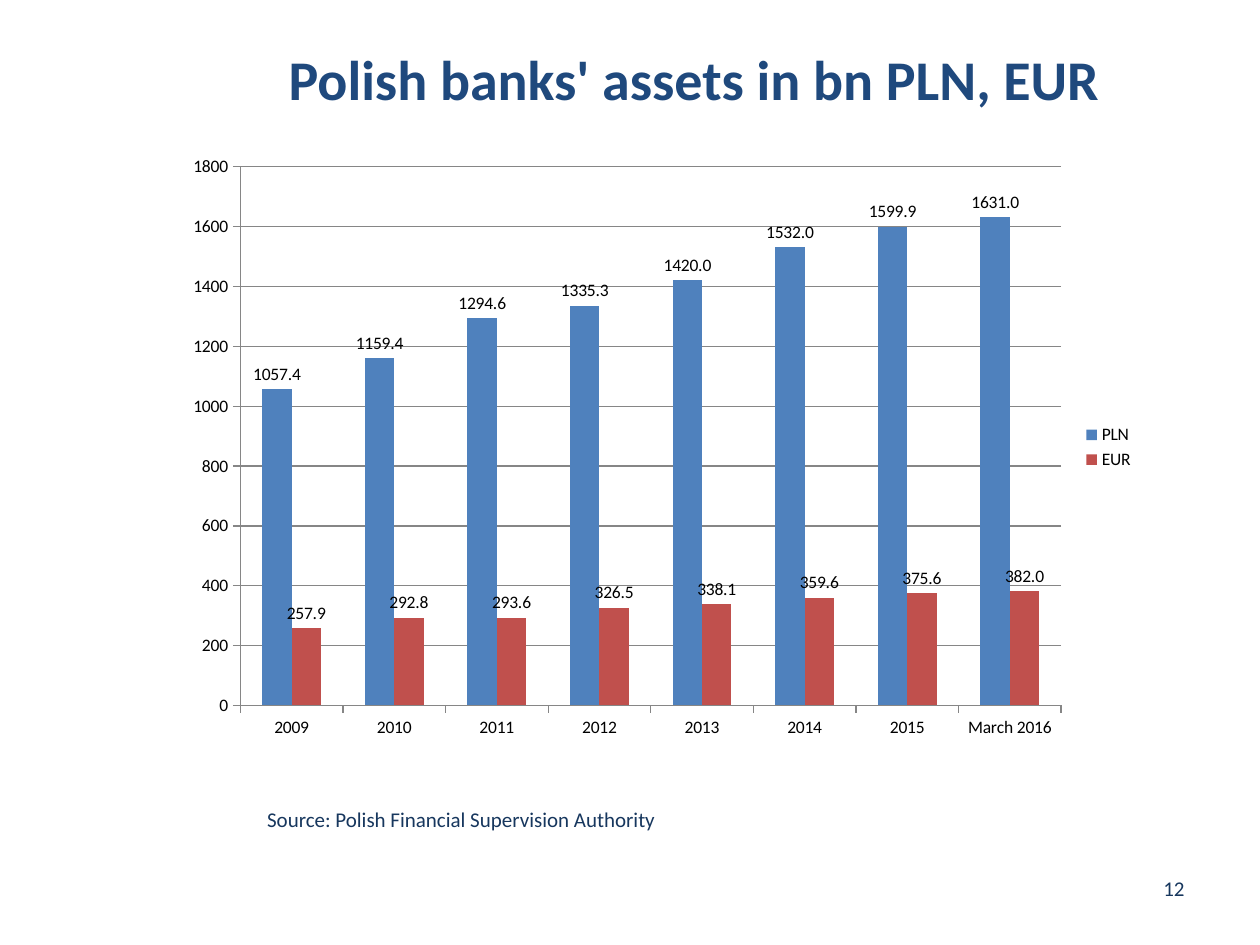
"""Build a slide charting Polish banks' assets in PLN and EUR."""
from pptx import Presentation
from pptx.chart.data import CategoryChartData
from pptx.dml.color import RGBColor
from pptx.enum.chart import XL_CHART_TYPE, XL_LABEL_POSITION, XL_LEGEND_POSITION, XL_TICK_MARK
from pptx.enum.text import MSO_ANCHOR, PP_ALIGN
from pptx.util import Inches, Pt

TITLE_BLUE = RGBColor(0x1F, 0x49, 0x7D)
TEXT_BLUE = RGBColor(0x17, 0x37, 0x5E)
BLACK = RGBColor(0x00, 0x00, 0x00)
GREY = RGBColor(0x86, 0x86, 0x86)
PLN_BLUE = RGBColor(0x4F, 0x81, 0xBD)
EUR_RED = RGBColor(0xC0, 0x50, 0x4D)
FONT = "Calibri"

YEARS = ["2009", "2010", "2011", "2012", "2013", "2014", "2015", "March 2016"]
ASSETS = [
    ("PLN", PLN_BLUE, [1057.4, 1159.4, 1294.6, 1335.3, 1420, 1532, 1599.9, 1631]),
    ("EUR", EUR_RED, [257.9, 292.8, 293.6, 326.5, 338.1, 359.6, 375.6, 382]),
]


def write_text(shape, text, size, color, alignment, anchor):
    frame = shape.text_frame
    frame.word_wrap = True
    frame.vertical_anchor = anchor
    frame.text = text
    paragraph = frame.paragraphs[0]
    paragraph.alignment = alignment
    paragraph.font.name = FONT
    paragraph.font.size = Pt(size)
    paragraph.font.color.rgb = color
    return paragraph


presentation = Presentation()
presentation.slide_width = Inches(10)
presentation.slide_height = Inches(7.5)
slide = presentation.slides.add_slide(presentation.slide_layouts[5])

left = Inches(1.02)
content_width = presentation.slide_width - left

title = slide.shapes.title
title.left, title.top, title.width, title.height = left, 0, content_width, Inches(0.94)
heading = write_text(title, "Polish banks' assets in bn PLN, EUR", 32, TITLE_BLUE,
                     PP_ALIGN.CENTER, MSO_ANCHOR.BOTTOM)
heading.font.bold = True

source = slide.shapes.add_textbox(left, Inches(6.35), content_width, Inches(0.3))
source.text_frame.margin_left = Inches(1.1)
write_text(source, "Source: Polish Financial Supervision Authority", 12, TEXT_BLUE,
           PP_ALIGN.LEFT, MSO_ANCHOR.TOP)

page_number = slide.shapes.add_textbox(Inches(7.17), Inches(6.74), Inches(2.33), Inches(0.61))
write_text(page_number, "12", 12, TEXT_BLUE, PP_ALIGN.RIGHT, MSO_ANCHOR.MIDDLE)

chart_data = CategoryChartData(number_format="0.0")
chart_data.categories = YEARS
for name, color, values in ASSETS:
    chart_data.add_series(name, values)
chart = slide.shapes.add_chart(XL_CHART_TYPE.COLUMN_CLUSTERED, Inches(1.38), Inches(1.15),
                               Inches(7.72), Inches(4.8), chart_data).chart
chart.has_title = False
chart.font.name = FONT
chart.font.size = Pt(10)
chart.font.color.rgb = BLACK
chart.has_legend = True
chart.legend.position = XL_LEGEND_POSITION.RIGHT
chart.legend.include_in_layout = False

for axis in (chart.category_axis, chart.value_axis):
    axis.major_tick_mark = XL_TICK_MARK.OUTSIDE
    axis.minor_tick_mark = XL_TICK_MARK.NONE
    axis.format.line.color.rgb = GREY
chart.value_axis.minimum_scale = 0
chart.value_axis.maximum_scale = 1800
chart.value_axis.major_unit = 200
chart.value_axis.tick_labels.number_format = "0"
chart.value_axis.tick_labels.number_format_is_linked = False
chart.value_axis.has_major_gridlines = True
chart.value_axis.major_gridlines.format.line.color.rgb = GREY

plot = chart.plots[0]
plot.gap_width = 150
plot.vary_by_categories = False
for series, (name, color, values) in zip(plot.series, ASSETS):
    series.format.fill.solid()
    series.format.fill.fore_color.rgb = color
    labels = series.data_labels
    labels.show_value = True
    labels.number_format = "0.0"
    labels.number_format_is_linked = False
    labels.position = XL_LABEL_POSITION.OUTSIDE_END

presentation.save("out.pptx")
